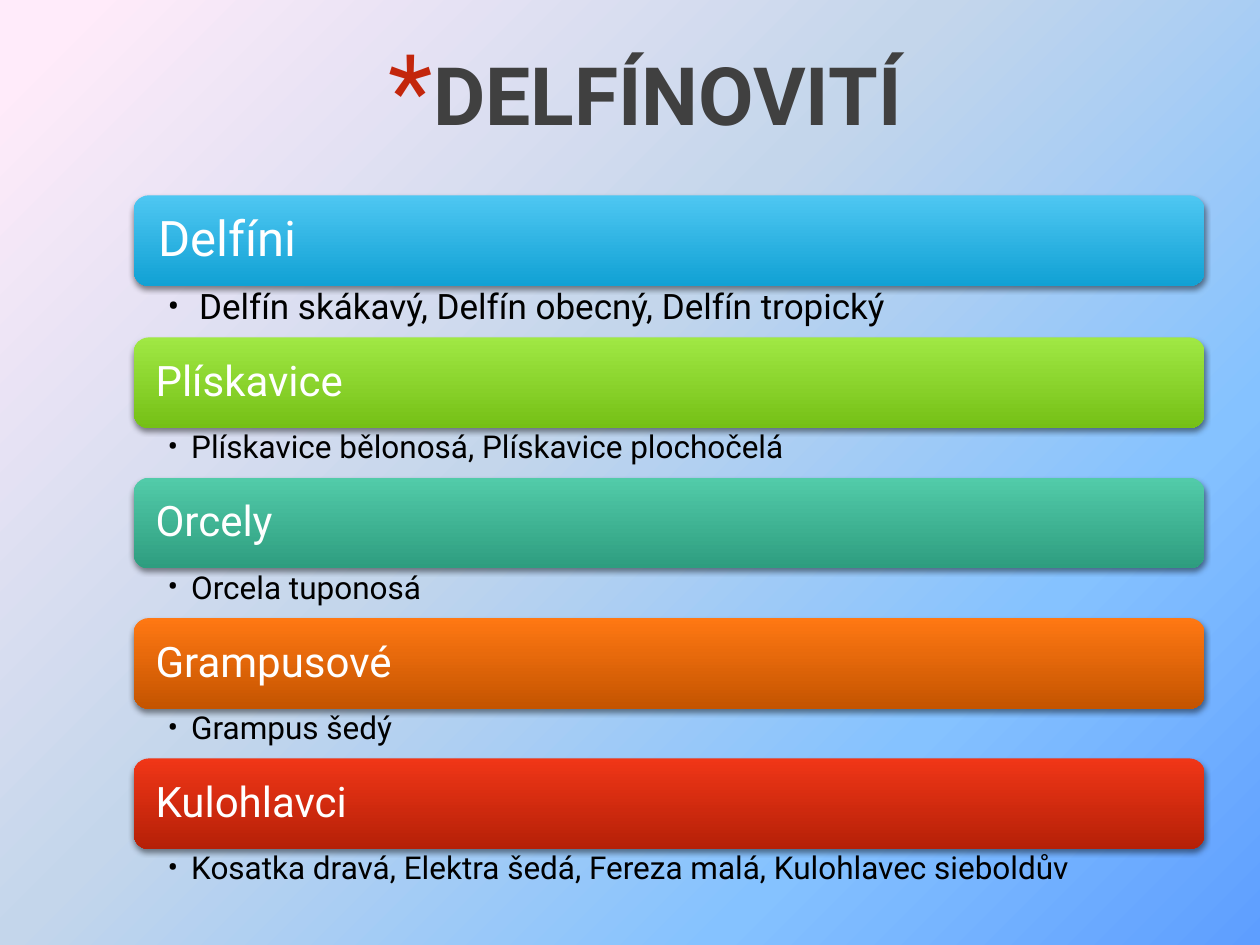
from lxml.etree import SubElement
from pptx import Presentation
from pptx.dml.color import RGBColor
from pptx.enum.shapes import MSO_SHAPE
from pptx.enum.text import MSO_ANCHOR, PP_ALIGN
from pptx.oxml.ns import qn
from pptx.util import Pt

# Content: family, species, bar gradient
TITLE = "DELFÍNOVITÍ"
FAMILIES = [
    ("Delfíni", "Delfín skákavý, Delfín obecný, Delfín tropický", ("4EC7F2", "11A1D4")),
    ("Plískavice", "Plískavice bělonosá, Plískavice plochočelá", ("A0E844", "75C016")),
    ("Orcely", "Orcela tuponosá", ("52CBA9", "2E9D7F")),
    ("Grampusové", "Grampus šedý", ("FF7813", "C45400")),
    ("Kulohlavci", "Kosatka dravá, Elektra šedá, Fereza malá, Kulohlavec sieboldův",
     ("F03617", "B52007")),
]

THEME = {
    "font": "Roboto",
    "title": "404040", "title_bullet": "C3260C", "title_size": 46,
    "family": "FFFFFF", "species": "000000", "shadow": "000000",
    "lead": {"family_size": 28, "species_size": 20, "inset": 11.5, "indent": 18},
    "rest": {"family_size": 24, "species_size": 18, "inset": 10, "indent": 13.5},
    "background": [(4, "FFEBFA"), (43, "C4D6EB"), (75, "85C2FF"), (100, "5E9EFF")],
}

# Layout in points
LEFT, TOP, WIDTH = 76.4, 111.6, 612
BAR_HEIGHT, SPECIES_HEIGHT = 51.8, 28.4
LEAD_EXTRA = 1  # the first species line is set larger
BAR_EDGE = 2.6  # text area inside the rounded corners


def add_node(parent, tag, **attributes):
    return SubElement(parent, qn(tag), {k: str(v) for k, v in attributes.items()})


def paint_gradient(fill, owner, stops, angle):
    fill.gradient()
    fill.gradient_angle = 360 - angle
    stop_list = next(owner.iter(qn("a:gsLst")))
    for old in list(stop_list):
        stop_list.remove(old)
    for position, color in stops:
        stop = add_node(stop_list, "a:gs", pos=position * 1000)
        add_node(stop, "a:srgbClr", val=color)


def add_shadow(shape):
    shape.shadow.inherit = False
    effects = shape._element.spPr.find(qn("a:effectLst"))
    shadow = add_node(effects, "a:outerShdw", blurRad=Pt(3.1), dist=Pt(1.8),
                      dir=90 * 60000, rotWithShape=0)
    color = add_node(shadow, "a:srgbClr", val=THEME["shadow"])
    add_node(color, "a:alpha", val=45000)


def set_bullet(paragraph, char, indent, color=None, percent=100):
    properties = paragraph._p.get_or_add_pPr()
    properties.set("marL", str(Pt(indent)))
    properties.set("indent", str(-Pt(indent)))
    if color:
        add_node(add_node(properties, "a:buClr"), "a:srgbClr", val=color)
    add_node(properties, "a:buSzPct", val=percent * 1000)
    add_node(properties, "a:buFont", typeface=THEME["font"])
    add_node(properties, "a:buChar", char=char)


def add_text(paragraph, text, size, color, bold=False):
    run = paragraph.add_run()
    run.text = text
    run.font.name, run.font.size, run.font.bold = THEME["font"], Pt(size), bold
    run.font.color.rgb = RGBColor.from_string(color)


def set_frame(frame, anchor, left, top, right, bottom):
    frame.word_wrap, frame.vertical_anchor = True, anchor
    frame.margin_left, frame.margin_top = Pt(left), Pt(top)
    frame.margin_right, frame.margin_bottom = Pt(right), Pt(bottom)


def add_family(slide, top, family, species, colors, style):
    # Bar with the family name
    bar = slide.shapes.add_shape(MSO_SHAPE.ROUNDED_RECTANGLE, Pt(LEFT), Pt(top),
                                 Pt(WIDTH), Pt(BAR_HEIGHT))
    paint_gradient(bar.fill, bar._element, zip((0, 100), colors), 90)
    bar.line.fill.background()
    add_shadow(bar)
    inset = style["inset"]
    set_frame(bar.text_frame, MSO_ANCHOR.MIDDLE, inset, inset, inset, inset)
    name = bar.text_frame.paragraphs[0]
    name.alignment, name.line_spacing = PP_ALIGN.LEFT, 0.9
    add_text(name, family, style["family_size"], THEME["family"])

    # Species line below the bar
    caption = slide.shapes.add_textbox(Pt(LEFT), Pt(top + BAR_HEIGHT),
                                       Pt(WIDTH), Pt(SPECIES_HEIGHT))
    set_frame(caption.text_frame, MSO_ANCHOR.TOP, 19.4, 2, inset, 2)
    line = caption.text_frame.paragraphs[0]
    line.level, line.line_spacing = 1, 0.9
    set_bullet(line, "•", style["indent"])
    add_text(line, species, style["species_size"], THEME["species"])


def main():
    deck = Presentation()
    deck.slide_width, deck.slide_height = Pt(720), Pt(540)
    slide = deck.slides.add_slide(deck.slide_layouts[5])
    paint_gradient(slide.background.fill, slide._element, THEME["background"], 45)

    # Title
    title = slide.shapes.title
    title.left, title.top, title.width, title.height = Pt(59.8), Pt(20.9), Pt(617.8), Pt(79.2)
    set_frame(title.text_frame, MSO_ANCHOR.TOP, 7.2, 5, 7.2, 3.6)
    heading = title.text_frame.paragraphs[0]
    heading.alignment = PP_ALIGN.CENTER
    set_bullet(heading, "*", 25.2, THEME["title_bullet"], 128)
    add_text(heading, TITLE, THEME["title_size"], THEME["title"], bold=True)

    # Families
    for index, (family, species, colors) in enumerate(FAMILIES):
        top = TOP + index * (BAR_HEIGHT + SPECIES_HEIGHT) + (LEAD_EXTRA if index else 0)
        style = THEME["rest" if index else "lead"]
        add_family(slide, top, family, species, colors, style)

    deck.save("out.pptx")


if __name__ == "__main__":
    main()
